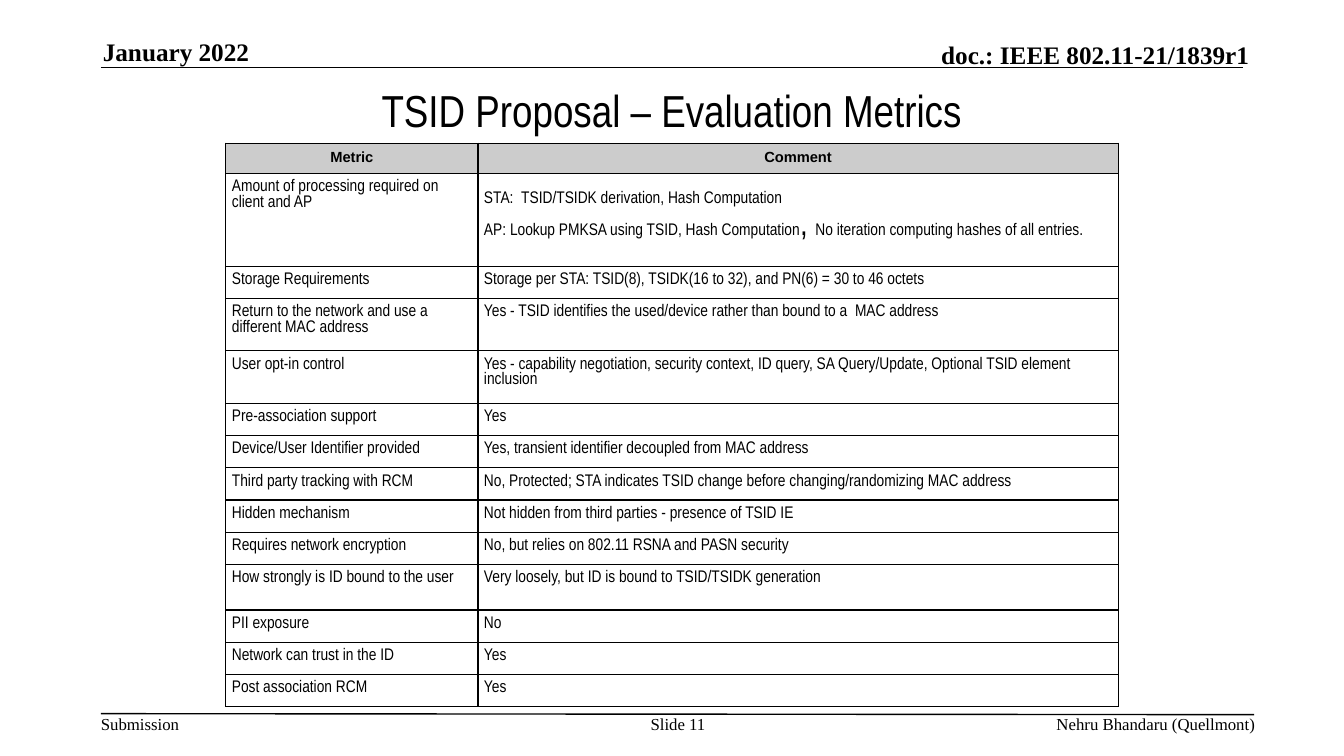
"""Build the TSID evaluation metrics slide."""
from lxml.etree import SubElement
from pptx import Presentation
from pptx.dml.color import RGBColor
from pptx.enum.shapes import MSO_CONNECTOR
from pptx.enum.text import MSO_ANCHOR, MSO_AUTO_SIZE, PP_ALIGN
from pptx.oxml.ns import qn
from pptx.util import Inches, Pt

COLORS = {"ink": "000000", "paper": "FFFFFF", "header": "CCCCCC"}
SERIF, SANS, NARROW = "Times New Roman", "Arial", "Arial Narrow"

TITLE = "TSID Proposal – Evaluation Metrics"
PAGE_LABELS = [
    ("January 2022", (1.02, 0.36, 2.73, 0.3), PP_ALIGN.LEFT, "header"),
    ("doc.: IEEE 802.11-21/1839r1", (7.29, 0.39, 5.1, 0.3), PP_ALIGN.RIGHT, "header"),
    ("Submission", (1, 7.08, 0.79, 0.2), PP_ALIGN.LEFT, "footer"),
    ("Slide 11", (6.34, 7.08, 0.77, 0.4), PP_ALIGN.CENTER, "footer"),
    ("Nehru Bhandaru (Quellmont)", (7.81, 7.08, 4.64, 0.2), PP_ALIGN.RIGHT, "footer"),
]
LABEL_STYLES = {
    "header": {"size": 18, "bold": True, "anchor": MSO_ANCHOR.BOTTOM},
    "footer": {"size": 12, "bold": False, "anchor": MSO_ANCHOR.TOP},
}
RULES = [(1, 0.67, 12.33, 0.67), (1, 7.08, 12.44, 7.09)]

PROCESSING = [
    ["STA:", (" ", 24), "TSID/TSIDK derivation, Hash Computation"],
    ["AP:\u00a0Lookup PMKSA using TSID, Hash Computation", (", ", 24),
     "No iteration computing hashes of all entries."],
]
METRICS = [
    ("Metric", "Comment", 0.3),
    ("Amount of processing required on client and AP", PROCESSING, 0.89),
    ("Storage Requirements",
     "Storage per STA: TSID(8), TSIDK(16 to 32), and PN(6) = 30 to 46 octets", 0.32),
    ("Return to the network and use a different MAC address",
     "Yes - TSID identifies the used/device rather than bound to a  MAC address", 0.51),
    ("User opt-in control",
     "Yes - capability negotiation, security context, ID query, SA Query/Update, "
     "Optional TSID element inclusion", 0.5),
    ("Pre-association support", "Yes", 0.32),
    ("Device/User Identifier provided",
     "Yes, transient identifier decoupled from MAC address", 0.32),
    ("Third party tracking with RCM",
     "No, Protected; STA indicates TSID change before changing/randomizing MAC address", 0.32),
    ("Hidden mechanism", "Not hidden from third parties - presence of TSID IE", 0.32),
    ("Requires network encryption", "No, but relies on 802.11 RSNA and PASN security", 0.32),
    ("How strongly is ID bound to the user",
     "Very loosely, but ID is bound to TSID/TSIDK generation", 0.45),
    ("PII exposure", "No", 0.32),
    ("Network can trust in the ID", "Yes", 0.32),
    ("Post association RCM", "Yes", 0.32),
]
COLUMN_WIDTHS = [2.5, 6.35]
TABLE_LEFT, TABLE_TOP = 2.24, 1.42
CELL_MARGIN = 0.06


def color(name):
    """Return the named colour."""
    return RGBColor.from_string(COLORS[name])


def write(frame, text, *, font, size, bold=False, align=PP_ALIGN.LEFT):
    """Write a string, or paragraphs of runs, into a text frame."""
    paragraphs = [[text]] if isinstance(text, str) else text
    for index, runs in enumerate(paragraphs):
        paragraph = frame.add_paragraph() if index else frame.paragraphs[0]
        paragraph.alignment = align
        for item in runs:
            words, points = (item, size) if isinstance(item, str) else item
            run = paragraph.add_run()
            run.text = words
            run.font.name = font
            run.font.size = Pt(points)
            run.font.bold = bold
            run.font.color.rgb = color("ink")


def add_label(slide, text, box, align, style):
    """Add a header or footer label."""
    frame = slide.shapes.add_textbox(*map(Inches, box)).text_frame
    frame.word_wrap = True
    frame.margin_left = frame.margin_right = frame.margin_top = frame.margin_bottom = 0
    frame.vertical_anchor = style["anchor"]
    write(frame, text, font=SERIF, size=style["size"], bold=style["bold"], align=align)


def add_rule(slide, ends):
    """Add a thin page rule."""
    rule = slide.shapes.add_connector(MSO_CONNECTOR.STRAIGHT, *map(Inches, ends))
    rule.line.color.rgb = color("ink")
    rule.line.width = Pt(1)
    SubElement(rule._element.spPr, qn("a:effectLst"))


def add_borders(cell):
    """Draw a border on all four sides of a cell."""
    properties = cell._tc.get_or_add_tcPr()
    for side in ("lnL", "lnR", "lnT", "lnB"):
        line = SubElement(properties, qn(f"a:{side}"), w=str(Pt(1)))
        fill = SubElement(line, qn("a:solidFill"))
        SubElement(fill, qn("a:srgbClr"), val=COLORS["ink"])


def add_title(slide):
    """Fill the title placeholder."""
    title = slide.shapes.title
    title.left, title.top = Inches(1), Inches(0.75)
    title.width, title.height = Inches(11.33), Inches(0.67)
    title.fill.solid()
    title.fill.fore_color.rgb = color("paper")
    frame = title.text_frame
    frame.auto_size = MSO_AUTO_SIZE.NONE
    frame.vertical_anchor = MSO_ANCHOR.MIDDLE
    write(frame, TITLE, font=NARROW, size=32, align=PP_ALIGN.CENTER)


def add_metrics(slide):
    """Add the table of metrics."""
    heights = [height for _, _, height in METRICS]
    table = slide.shapes.add_table(
        len(METRICS), len(COLUMN_WIDTHS), Inches(TABLE_LEFT), Inches(TABLE_TOP),
        Inches(sum(COLUMN_WIDTHS)), Inches(sum(heights))).table
    table.first_row = table.horz_banding = False
    for column, width in zip(table.columns, COLUMN_WIDTHS):
        column.width = Inches(width)
    for row_index, (metric, comment, height) in enumerate(METRICS):
        table.rows[row_index].height = Inches(height)
        for cell, text in zip(table.rows[row_index].cells, (metric, comment)):
            cell.margin_left = cell.margin_right = Inches(CELL_MARGIN)
            cell.margin_top = cell.margin_bottom = Inches(CELL_MARGIN)
            add_borders(cell)
            if row_index == 0:
                cell.fill.solid()
                cell.fill.fore_color.rgb = color("header")
                write(cell.text_frame, text, font=SANS, size=10.5, bold=True,
                      align=PP_ALIGN.CENTER)
            else:
                cell.fill.background()
                write(cell.text_frame, text, font=NARROW, size=12)


def main():
    """Build and save the presentation."""
    presentation = Presentation()
    presentation.slide_width, presentation.slide_height = Inches(13.33), Inches(7.5)
    slide = presentation.slides.add_slide(presentation.slide_layouts[5])
    for ends in RULES:
        add_rule(slide, ends)
    add_title(slide)
    for text, box, align, style in PAGE_LABELS:
        add_label(slide, text, box, align, LABEL_STYLES[style])
    add_metrics(slide)
    presentation.save("out.pptx")


if __name__ == "__main__":
    main()
